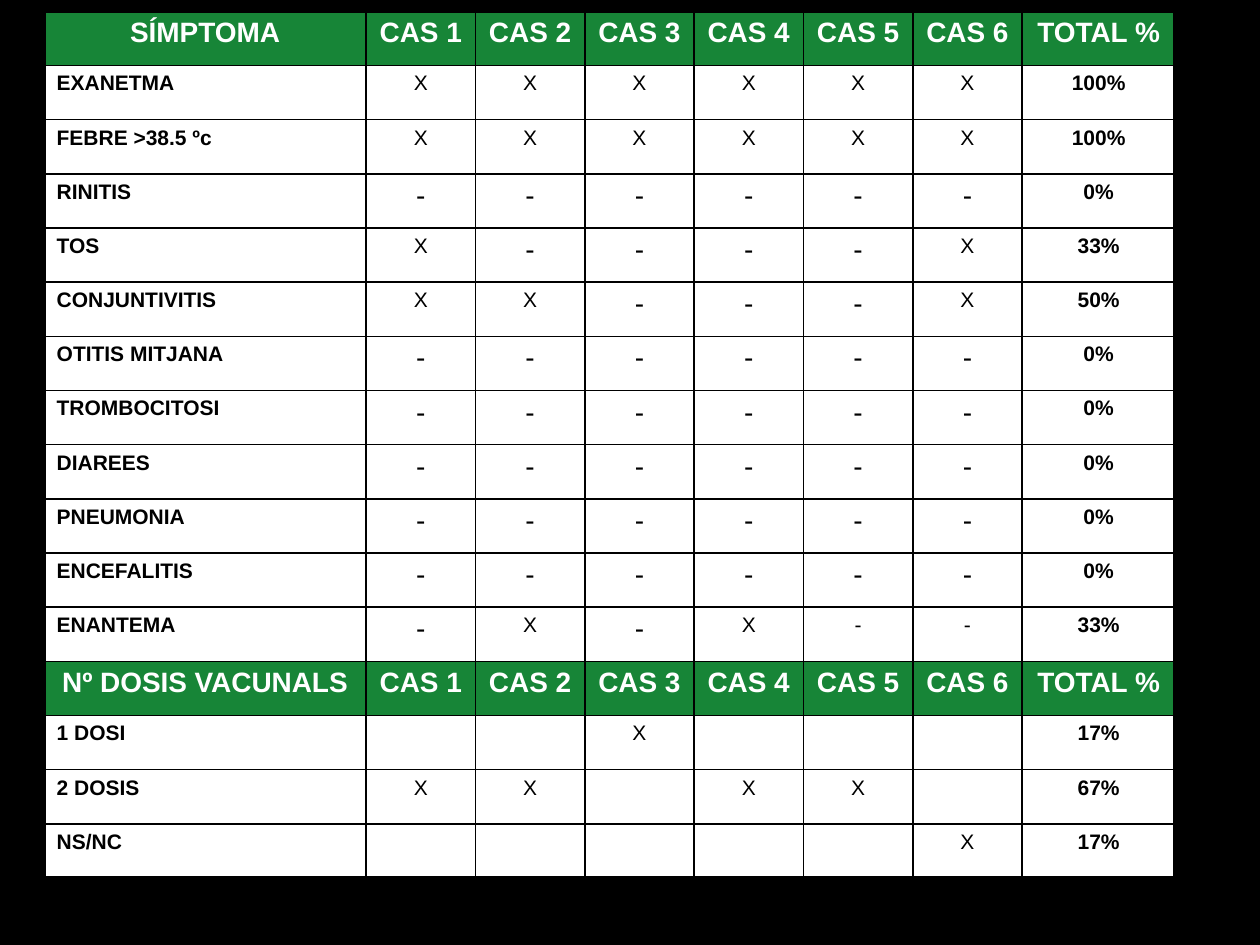
from lxml import etree
from pptx import Presentation
from pptx.dml.color import RGBColor
from pptx.enum.text import PP_ALIGN
from pptx.oxml.ns import qn
from pptx.util import Pt

LEFT, CENTER = PP_ALIGN.LEFT, PP_ALIGN.CENTER

CASES = [f"CAS {number}" for number in range(1, 7)]
SECTIONS = [
    ("SÍMPTOMA", [
        ("EXANETMA", "XXXXXX", "100%"),
        ("FEBRE >38.5 ºc", "XXXXXX", "100%"),
        ("RINITIS", "------", "0%"),
        ("TOS", "X----X", "33%"),
        ("CONJUNTIVITIS", "XX---X", "50%"),
        ("OTITIS MITJANA", "------", "0%"),
        ("TROMBOCITOSI", "------", "0%"),
        ("DIAREES", "------", "0%"),
        ("PNEUMONIA", "------", "0%"),
        ("ENCEFALITIS", "------", "0%"),
        ("ENANTEMA", "-X-X--", "33%"),
    ]),
    ("Nº DOSIS VACUNALS", [
        ("1 DOSI", "  X   ", "17%"),
        ("2 DOSIS", "XX XX ", "67%"),
        ("NS/NC", "     X", "17%"),
    ]),
]
SMALL_DASHES = {("ENANTEMA", "CAS 5"), ("ENANTEMA", "CAS 6")}

THEME = {
    "font": "Arial",
    "black": "000000",
    "white": "FFFFFF",
    "green": "178537",
    "large": 16,
    "small": 12,
    "inner_line": 1,
    "outer_line": 2.25,
}
TABLE_LEFT, TABLE_TOP = 25.2, 6.5
COLUMN_WIDTHS = [184] + [62.5] * len(CASES) + [87.5]
ROW_HEIGHT = 30.96


def add_border(cell, side, width):
    line = etree.SubElement(cell._tc.get_or_add_tcPr(), qn(f"a:ln{side}"), w=str(Pt(width)))
    fill = etree.SubElement(line, qn("a:solidFill"))
    etree.SubElement(fill, qn("a:srgbClr"), val=THEME["black"])


def style_cell(cell, fill, outer_sides):
    for side in "LRTB":
        add_border(cell, side, THEME["outer_line" if side in outer_sides else "inner_line"])
    cell.fill.solid()
    cell.fill.fore_color.rgb = RGBColor.from_string(fill)


def write_cell(cell, text, size, color, bold, align):
    para = cell.text_frame.paragraphs[0]
    para.alignment = align
    span = para.add_run()
    span.text = text
    span.font.name = THEME["font"]
    span.font.size = Pt(size)
    span.font.bold = bold
    span.font.color.rgb = RGBColor.from_string(color)


def table_rows():
    for title, records in SECTIONS:
        yield True, [title, *CASES, "TOTAL %"]
        for label, marks, total in records:
            yield False, [label, *marks, total]


def text_style(is_header, values, column):
    if is_header:
        return THEME["large"], THEME["white"], True, CENTER
    is_mark = 0 < column <= len(CASES)
    is_large = (is_mark and values[column] == "-"
                and (values[0], CASES[column - 1]) not in SMALL_DASHES)
    size = THEME["large" if is_large else "small"]
    return size, THEME["black"], not is_mark, CENTER if column else LEFT


def main():
    deck = Presentation()
    deck.slide_width, deck.slide_height = Pt(720), Pt(540)
    page = deck.slides.add_slide(deck.slide_layouts[6])
    page.background.fill.solid()
    page.background.fill.fore_color.rgb = RGBColor.from_string(THEME["black"])

    rows = list(table_rows())
    last_row, last_column = len(rows) - 1, len(COLUMN_WIDTHS) - 1
    table = page.shapes.add_table(
        len(rows), len(COLUMN_WIDTHS), Pt(TABLE_LEFT), Pt(TABLE_TOP),
        Pt(sum(COLUMN_WIDTHS)), Pt(ROW_HEIGHT * len(rows))).table
    for column, width in zip(table.columns, COLUMN_WIDTHS):
        column.width = Pt(width)

    for row, (is_header, values) in enumerate(rows):
        table.rows[row].height = Pt(ROW_HEIGHT)
        for column, value in enumerate(values):
            cell = table.cell(row, column)
            edges = {"L": column == 0, "R": column == last_column,
                     "T": row == 0, "B": row == last_row}
            outer_sides = [side for side, is_outer in edges.items() if is_outer]
            style_cell(cell, THEME["green" if is_header else "white"], outer_sides)
            if value.strip():
                write_cell(cell, value, *text_style(is_header, values, column))

    deck.save("out.pptx")


if __name__ == "__main__":
    main()
